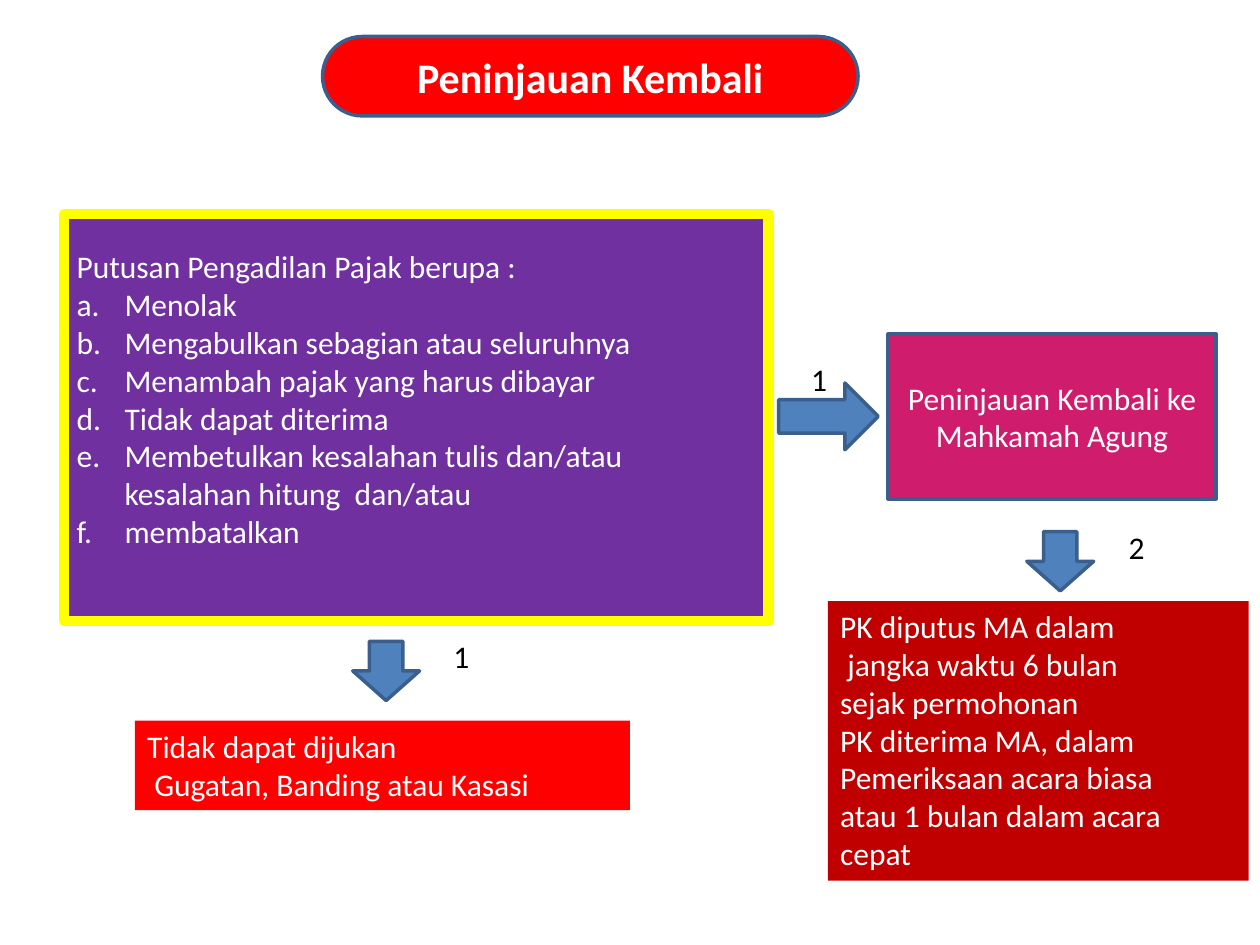
from pptx import Presentation
from pptx.dml.color import RGBColor
from pptx.enum.shapes import MSO_SHAPE
from pptx.enum.text import MSO_ANCHOR, PP_ALIGN
from pptx.util import Inches, Pt
from lxml import etree

RECT, PILL = MSO_SHAPE.RECTANGLE, MSO_SHAPE.ROUNDED_RECTANGLE
DOWN, RIGHT = MSO_SHAPE.DOWN_ARROW, MSO_SHAPE.RIGHT_ARROW
LEFT, CENTER = PP_ALIGN.LEFT, PP_ALIGN.CENTER
TOP, MIDDLE = MSO_ANCHOR.TOP, MSO_ANCHOR.MIDDLE

THEME = {
    "font": "Calibri", "title": 24, "body": 18,
    "white": "FFFFFF", "black": "000000", "red": "FF0000", "dark_red": "C00000",
    "purple": "7030A0", "yellow": "FFFF00", "pink": "D01C6D",
    "blue": "4F81BD", "outline": "3A5F8C",
}

prs = Presentation()
prs.slide_width, prs.slide_height = Inches(10), Inches(7.5)
s = prs.slides.add_slide(prs.slide_layouts[6])


def add_box(kind, box, fill, line=None, width=2):
    sp = s.shapes.add_shape(kind, *map(Inches, box))
    sp.shadow.inherit = False
    sp.fill.solid()
    sp.fill.fore_color.rgb = RGBColor.from_string(THEME[fill])
    if line:
        sp.line.color.rgb = RGBColor.from_string(THEME[line])
        sp.line.width = Pt(width)
    else:
        sp.line.fill.background()
    return sp


def write(sp, lines, size="body", color="white", bold=False, align=LEFT,
          anchor=TOP, list_from=None):
    tf = sp.text_frame
    tf.word_wrap = True
    tf.vertical_anchor = anchor
    for i, line in enumerate(lines):
        p = tf.paragraphs[0] if i == 0 else tf.add_paragraph()
        p.alignment = align
        r = p.add_run()
        r.text = line
        r.font.name, r.font.size, r.font.bold = THEME["font"], Pt(THEME[size]), bold
        r.font.color.rgb = RGBColor.from_string(THEME[color])
        # Lettered list items with a hanging indent
        if list_from is not None and i >= list_from:
            pPr = p._p.get_or_add_pPr()
            pPr.set("marL", str(Inches(0.38)))
            pPr.set("indent", str(-Inches(0.38)))
            ns = pPr.nsmap["a"]
            etree.SubElement(pPr, f"{{{ns}}}buFont", typeface="+mj-lt")
            etree.SubElement(pPr, f"{{{ns}}}buAutoNum", type="alphaLcPeriod")


# Title
title = add_box(PILL, (2.56, 0.29, 4.25, 0.63), "red", "outline")
title.adjustments[0] = 0.5
write(title, ["Peninjauan Kembali"], size="title", bold=True, align=CENTER, anchor=MIDDLE)

# Tax court rulings
rulings = add_box(RECT, (0.51, 1.7, 5.59, 3.23), "purple", "yellow", 6)
rulings.text_frame.margin_bottom = Inches(0.35)
write(rulings, [
    "Putusan Pengadilan Pajak berupa :",
    "Menolak",
    "Mengabulkan sebagian atau seluruhnya",
    "Menambah pajak yang harus dibayar",
    "Tidak dapat diterima",
    "Membetulkan kesalahan tulis dan/atau kesalahan hitung  dan/atau",
    "membatalkan",
], anchor=MIDDLE, list_from=1)

# Supreme court review
review = add_box(RECT, (7.05, 2.65, 2.6, 1.31), "pink", "outline")
write(review, ["Peninjauan Kembali ke Mahkamah Agung"], align=CENTER, anchor=MIDDLE)

# Outcomes
no_appeal = add_box(RECT, (1.07, 5.72, 3.93, 0.71), "red")
write(no_appeal, ["Tidak dapat dijukan", " Gugatan, Banding atau Kasasi"])

decision = add_box(RECT, (6.57, 4.77, 3.34, 2.22), "dark_red")
write(decision, [
    "PK diputus MA dalam",
    " jangka waktu 6 bulan",
    "sejak permohonan",
    "PK diterima MA, dalam",
    "Pemeriksaan acara biasa",
    "atau 1 bulan dalam acara",
    "cepat",
])

# Arrows with step numbers
for kind, box, number, x, y in [
    (DOWN, (2.8, 5.09, 0.53, 0.47), "1", 3.5, 5.01),
    (RIGHT, (6.18, 3.04, 0.79, 0.53), "1", 6.34, 2.81),
    (DOWN, (8.15, 4.22, 0.53, 0.47), "2", 8.86, 4.14),
]:
    add_box(kind, box, "blue", "outline")
    label = s.shapes.add_textbox(Inches(x), Inches(y), Inches(0.36), Inches(0.4))
    write(label, [number], color="black")

prs.save("out.pptx")
